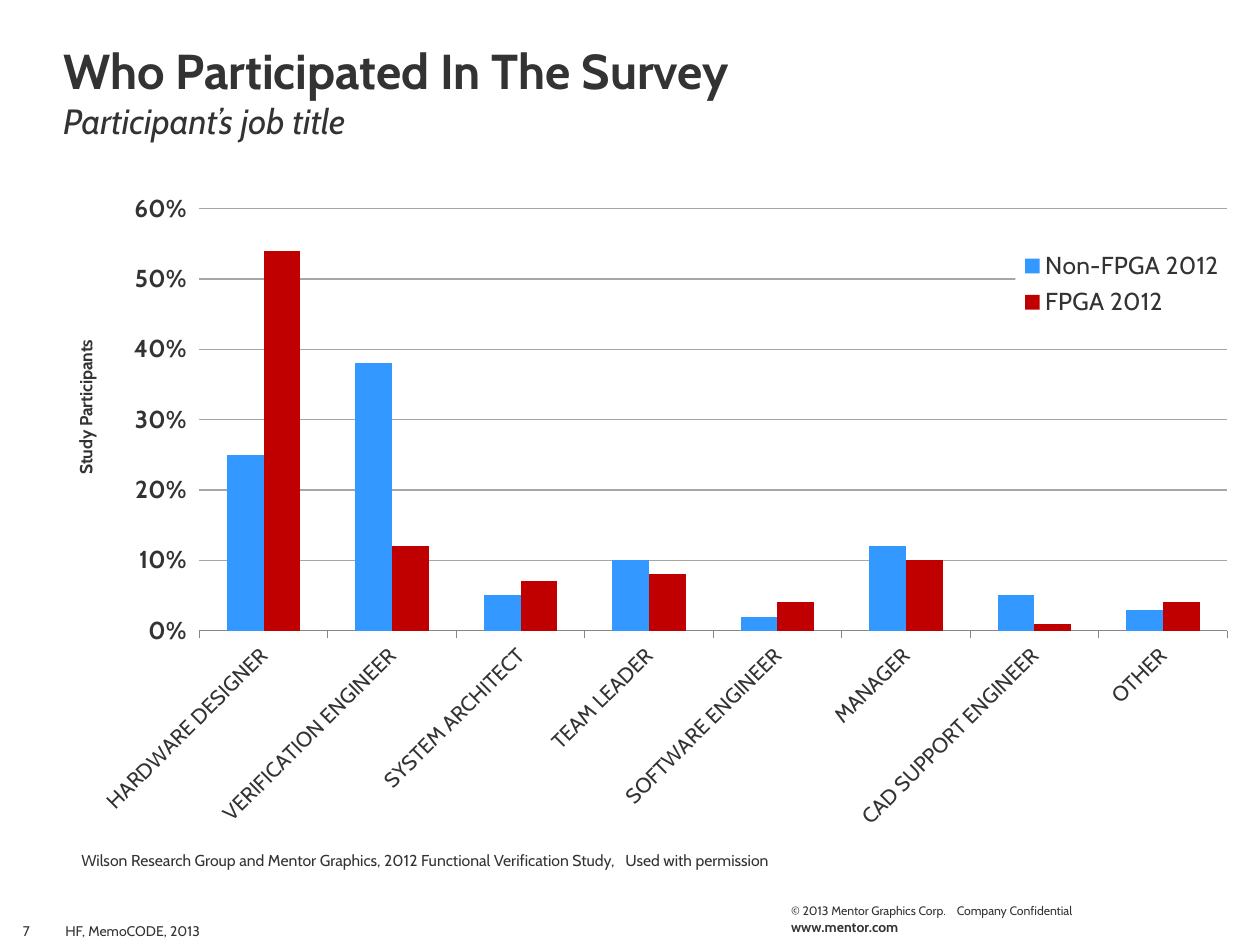
from lxml import etree
from pptx import Presentation
from pptx.chart.data import CategoryChartData
from pptx.dml.color import RGBColor
from pptx.enum.chart import XL_CHART_TYPE, XL_LEGEND_POSITION, XL_TICK_MARK
from pptx.enum.text import MSO_ANCHOR, MSO_AUTO_SIZE, PP_ALIGN
from pptx.oxml import parse_xml
from pptx.oxml.ns import nsdecls, qn
from pptx.util import Inches, Pt

COLUMNS = XL_CHART_TYPE.COLUMN_CLUSTERED
LEGEND_RIGHT = XL_LEGEND_POSITION.RIGHT
TICK_OUTSIDE, TICK_NONE = XL_TICK_MARK.OUTSIDE, XL_TICK_MARK.NONE
TOP, BOTTOM = MSO_ANCHOR.TOP, MSO_ANCHOR.BOTTOM
LEFT, CENTER, RIGHT = PP_ALIGN.LEFT, PP_ALIGN.CENTER, PP_ALIGN.RIGHT
NO_AUTOFIT = MSO_AUTO_SIZE.NONE

FONT = "Cabin"
COLORS = {"text": "333333", "grid": "A6A6A6", "axis": "868686",
          "non_fpga": "3398FF", "fpga": "C00000", "background": "FFFFFF"}

JOB_TITLES = ["HARDWARE DESIGNER", "VERIFICATION ENGINEER", "SYSTEM ARCHITECT",
              "TEAM LEADER", "SOFTWARE ENGINEER", "MANAGER",
              "CAD SUPPORT ENGINEER", "OTHER"]
SERIES = [
    ("Non-FPGA 2012", "non_fpga", [0.25, 0.38, 0.05, 0.10, 0.02, 0.12, 0.05, 0.03]),
    ("FPGA 2012", "fpga", [0.54, 0.12, 0.07, 0.08, 0.04, 0.10, 0.01, 0.04]),
]
FOOTERS = [
    ("www.mentor.com", (6.18, 7.24, 1.58, 0.23), {"bold": True}, {}),
    ("© 2013 Mentor Graphics Corp.    Company Confidential",
     (6.18, 7.12, 2.65, 0.22), {"size": 7}, {}),
    ("HF, MemoCODE, 2013", (0.42, 7.25, 5.7, 0.25), {}, {"anchor": BOTTOM}),
    ("7", (0, 7.25, 0.42, 0.25), {}, {"anchor": BOTTOM, "align": CENTER}),
    ("Wilson Research Group and Mentor Graphics, 2012 Functional Verification Study,"
     "   Used with permission ", (0, 6.7, 6.22, 0.25), {"size": 9}, {"align": RIGHT}),
]


def color(name):
    return RGBColor.from_string(COLORS[name])


def format_font(font, size=8, bold=False, italic=False):
    font.name, font.size, font.bold, font.italic = FONT, Pt(size), bold, italic
    font.color.rgb = color("text")


def add_text(paragraph, text, **style):
    run = paragraph.add_run()
    run.text = text
    format_font(run.font, **style)


def set_layout(element, index, inner=False, **fractions):
    for old_layout in element.findall(qn("c:layout")):
        element.remove(old_layout)
    layout = parse_xml(f"<c:layout {nsdecls('c')}><c:manualLayout/></c:layout>")
    settings = {"layoutTarget": "inner"} if inner else {}
    settings.update(xMode="edge", yMode="edge", **fractions)
    for name, value in settings.items():
        etree.SubElement(layout[0], qn(f"c:{name}")).set("val", str(value))
    element.insert(index, layout)


class SurveySlide:
    """Holds the style and the current slide, with a method for each element."""

    def __init__(self, presentation):
        self.slide = presentation.slides.add_slide(presentation.slide_layouts[5])

    def add_title(self, title, subtitle):
        shape = self.slide.shapes.title
        shape.left, shape.top = Inches(0), Inches(0)
        shape.width, shape.height = Inches(10), Inches(1.17)
        frame = shape.text_frame
        frame.auto_size, frame.vertical_anchor = NO_AUTOFIT, BOTTOM
        frame.margin_left = frame.margin_right = Inches(0.5)
        paragraph = frame.paragraphs[0]
        paragraph.alignment = LEFT
        add_text(paragraph, title, size=28, bold=True)
        paragraph.add_line_break()
        add_text(paragraph, subtitle, size=20, italic=True)

    def add_text_box(self, text, box, style, anchor=TOP, align=LEFT):
        frame = self.slide.shapes.add_textbox(*map(Inches, box)).text_frame
        frame.word_wrap, frame.vertical_anchor = True, anchor
        paragraph = frame.paragraphs[0]
        paragraph.alignment = align
        add_text(paragraph, text, **style)

    def add_chart(self, box):
        data = CategoryChartData(number_format="0%")
        data.categories = JOB_TITLES
        for name, _, values in SERIES:
            data.add_series(name, values)
        chart = self.slide.shapes.add_chart(COLUMNS, *map(Inches, box), data).chart
        chart.has_title = False
        format_font(chart.font, size=10)
        plot = chart.plots[0]
        plot.vary_by_categories, plot.gap_width, plot.overlap = False, 150, 0
        for series, (_, fill, _) in zip(plot.series, SERIES):
            series.format.fill.solid()
            series.format.fill.fore_color.rgb = color(fill)
        plot_area = chart.plots[0]._element.getparent()
        set_layout(plot_area, 0, inner=True, x=0.12, y=0.03, w=0.835, h=0.643)
        self.format_axes(chart)
        self.add_legend(chart)

    def format_axes(self, chart):
        jobs, share = chart.category_axis, chart.value_axis
        jobs.major_tick_mark = share.major_tick_mark = TICK_OUTSIDE
        jobs.minor_tick_mark = share.minor_tick_mark = TICK_NONE
        jobs.format.line.color.rgb = color("axis")
        format_font(jobs.tick_labels.font, size=12)
        jobs._element.find(qn("c:txPr")).find(qn("a:bodyPr")).set("rot", "-2700000")
        share.minimum_scale, share.maximum_scale, share.major_unit = 0, 0.6, 0.1
        share.format.line.fill.background()
        share.major_gridlines.format.line.color.rgb = color("grid")
        share.major_gridlines.format.line.width = Pt(0.75)
        format_font(share.tick_labels.font, size=14, bold=True)
        share.tick_labels.number_format = "0%"
        share.tick_labels.number_format_is_linked = False
        title = share.axis_title
        add_text(title.text_frame.paragraphs[0], "Study Participants", size=10, bold=True)
        title._element.find(".//" + qn("a:bodyPr")).set("rot", "-5400000")
        set_layout(title._element, 1, x=0.015, y=0.225)

    def add_legend(self, chart):
        chart.has_legend = True
        legend = chart.legend
        legend.position, legend.include_in_layout = LEGEND_RIGHT, False
        format_font(legend.font, size=14)
        set_layout(legend._element, 1, x=0.783, y=0.085, w=0.173, h=0.12)
        background = parse_xml(
            f"<c:spPr {nsdecls('c', 'a')}><a:solidFill><a:srgbClr "
            f"val=\"{COLORS['background']}\"/></a:solidFill></c:spPr>")
        legend._element.find(qn("c:overlay")).addnext(background)


def main():
    presentation = Presentation()
    presentation.slide_width, presentation.slide_height = Inches(10), Inches(7.5)
    survey = SurveySlide(presentation)
    survey.add_title("Who Participated In The Survey ", "Participant’s job title")
    for text, box, style, placement in FOOTERS:
        survey.add_text_box(text, box, style, **placement)
    survey.add_chart((0.41, 1.5, 9.77, 5.21))
    presentation.save("out.pptx")


if __name__ == "__main__":
    main()
